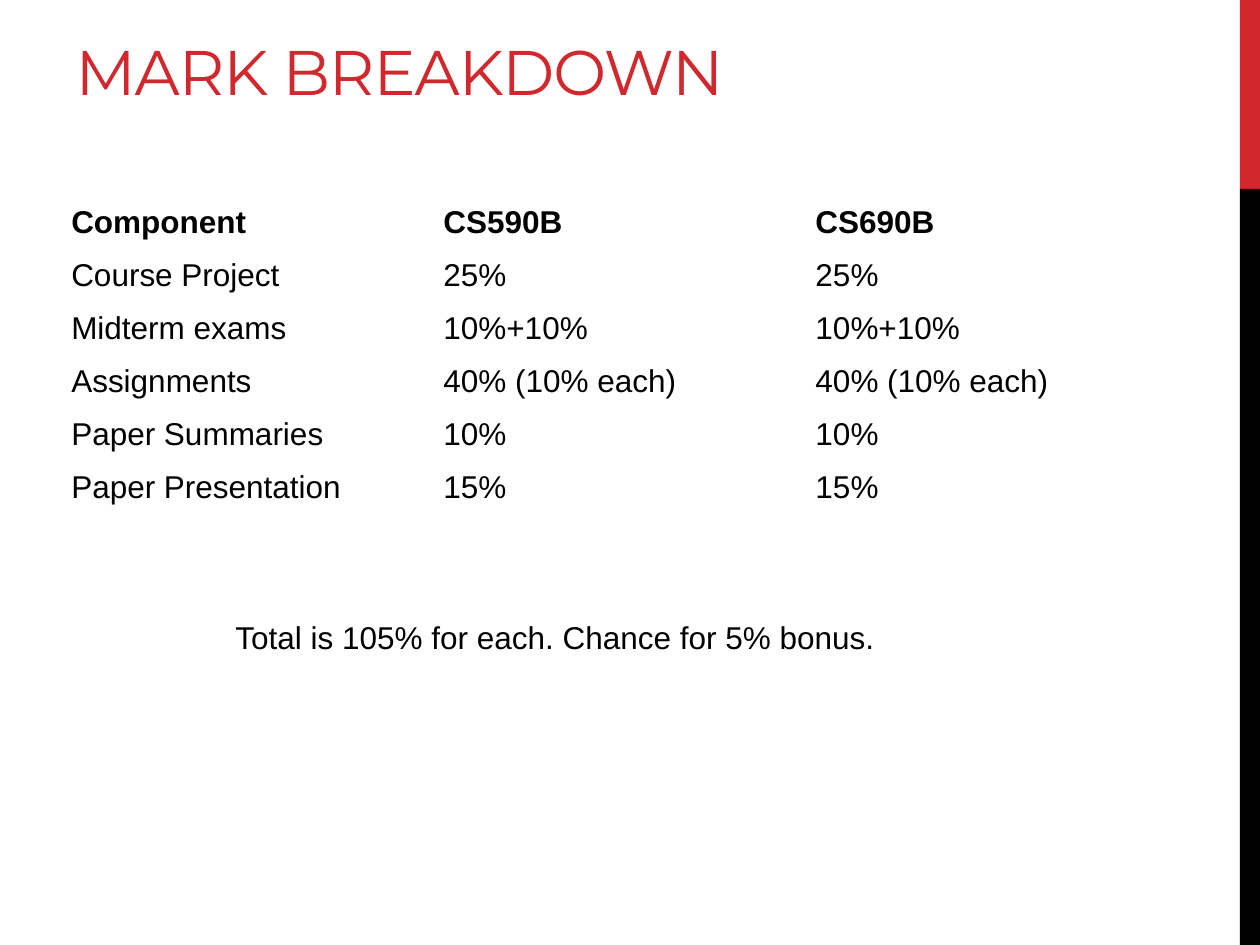
from dataclasses import dataclass

from pptx import Presentation
from pptx.dml.color import RGBColor
from pptx.enum.shapes import MSO_SHAPE
from pptx.enum.text import MSO_ANCHOR, MSO_AUTO_SIZE, PP_ALIGN
from pptx.slide import Slide
from pptx.text.text import TextFrame
from pptx.util import Inches, Pt

RECTANGLE = MSO_SHAPE.RECTANGLE
MIDDLE, BOTTOM = MSO_ANCHOR.MIDDLE, MSO_ANCHOR.BOTTOM
LEFT = PP_ALIGN.LEFT
FIT_SHAPE, NO_FIT = MSO_AUTO_SIZE.SHAPE_TO_FIT_TEXT, MSO_AUTO_SIZE.NONE

COLORS = {"accent": "D1282E", "text": "000000", "paper": "FFFFFF"}
SLIDE_WIDTH, SLIDE_HEIGHT = Inches(10), Inches(7.5)
MARGIN, CONTENT_WIDTH = Inches(0.5), Inches(8.86)
ROW_HEIGHT, CELL_INSET = Inches(0.42), Pt(4.75)
BAR_WIDTH = Inches(0.16)

MARKS = [
    ("Component", "CS590B", "CS690B"),
    ("Course Project", "25%", "25%"),
    ("Midterm exams", "10%+10%", "10%+10%"),
    ("Assignments", "40% (10% each)", "40% (10% each)"),
    ("Paper Summaries", "10%", "10%"),
    ("Paper Presentation", "15%", "15%"),
]


@dataclass(frozen=True)
class SideBar:
    top_share: float
    height_share: float
    color: str


@dataclass(frozen=True)
class TextStyle:
    font: str
    size: float
    color: str
    bold: bool = False
    spacing: int = 0


SIDE_BARS = [SideBar(0, 0.2, "accent"), SideBar(0.2, 0.8, "text")]
TITLE = TextStyle("Montserrat", 36, "accent", spacing=-60)
BODY = TextStyle("Arial", 18, "text")
HEADER = TextStyle("Arial", 18, "text", bold=True)


def color(name: str) -> RGBColor:
    return RGBColor.from_string(COLORS[name])


def write(text_frame: TextFrame, text: str, style: TextStyle) -> None:
    text_frame.text = text
    paragraph = text_frame.paragraphs[0]
    paragraph.alignment = LEFT
    run = paragraph.runs[0]
    run.font.name = style.font
    run.font.size = Pt(style.size)
    run.font.bold = style.bold
    run.font.color.rgb = color(style.color)
    if style.spacing:
        run._r.get_or_add_rPr().set("spc", str(style.spacing))


def draw_side_bar(slide: Slide, bar: SideBar) -> None:
    shape = slide.shapes.add_shape(
        RECTANGLE, SLIDE_WIDTH - BAR_WIDTH, int(SLIDE_HEIGHT * bar.top_share),
        BAR_WIDTH, int(SLIDE_HEIGHT * bar.height_share))
    shape.shadow.inherit = False
    shape.fill.solid()
    shape.fill.fore_color.rgb = color(bar.color)
    shape.line.fill.background()


def draw_title(slide: Slide, text: str) -> None:
    title = slide.shapes.title
    title.left, title.top = MARGIN, Inches(0.17)
    title.width, title.height = CONTENT_WIDTH, Inches(0.74)
    write(title.text_frame, text, TITLE)
    title.text_frame.vertical_anchor = BOTTOM
    title.text_frame.auto_size = NO_FIT


def draw_marks(slide: Slide) -> None:
    table = slide.shapes.add_table(
        len(MARKS), len(MARKS[0]), MARGIN, Inches(1.56),
        CONTENT_WIDTH, ROW_HEIGHT * len(MARKS)).table
    table.horz_banding = False
    table.first_row = False
    for row_index, texts in enumerate(MARKS):
        for column_index, text in enumerate(texts):
            cell = table.cell(row_index, column_index)
            cell.fill.solid()
            cell.fill.fore_color.rgb = color("paper")
            cell.vertical_anchor = MIDDLE
            cell.margin_left = cell.margin_right = CELL_INSET
            cell.margin_top = cell.margin_bottom = CELL_INSET
            write(cell.text_frame, text, BODY if row_index else HEADER)


def draw_note(slide: Slide, text: str) -> None:
    note = slide.shapes.add_textbox(
        Inches(1.77), Inches(4.86), Inches(5.32), Inches(0.4))
    note.text_frame.word_wrap = False
    note.text_frame.auto_size = FIT_SHAPE
    write(note.text_frame, text, BODY)


def main() -> None:
    presentation = Presentation()
    presentation.slide_width, presentation.slide_height = SLIDE_WIDTH, SLIDE_HEIGHT
    title_only = presentation.slide_layouts.get_by_name("Title Only")
    slide = presentation.slides.add_slide(title_only)
    for bar in SIDE_BARS:
        draw_side_bar(slide, bar)
    draw_title(slide, "MARK BREAKDOWN")
    draw_marks(slide)
    draw_note(slide, "Total is 105% for each. Chance for 5% bonus.")
    presentation.save("out.pptx")


if __name__ == "__main__":
    main()
